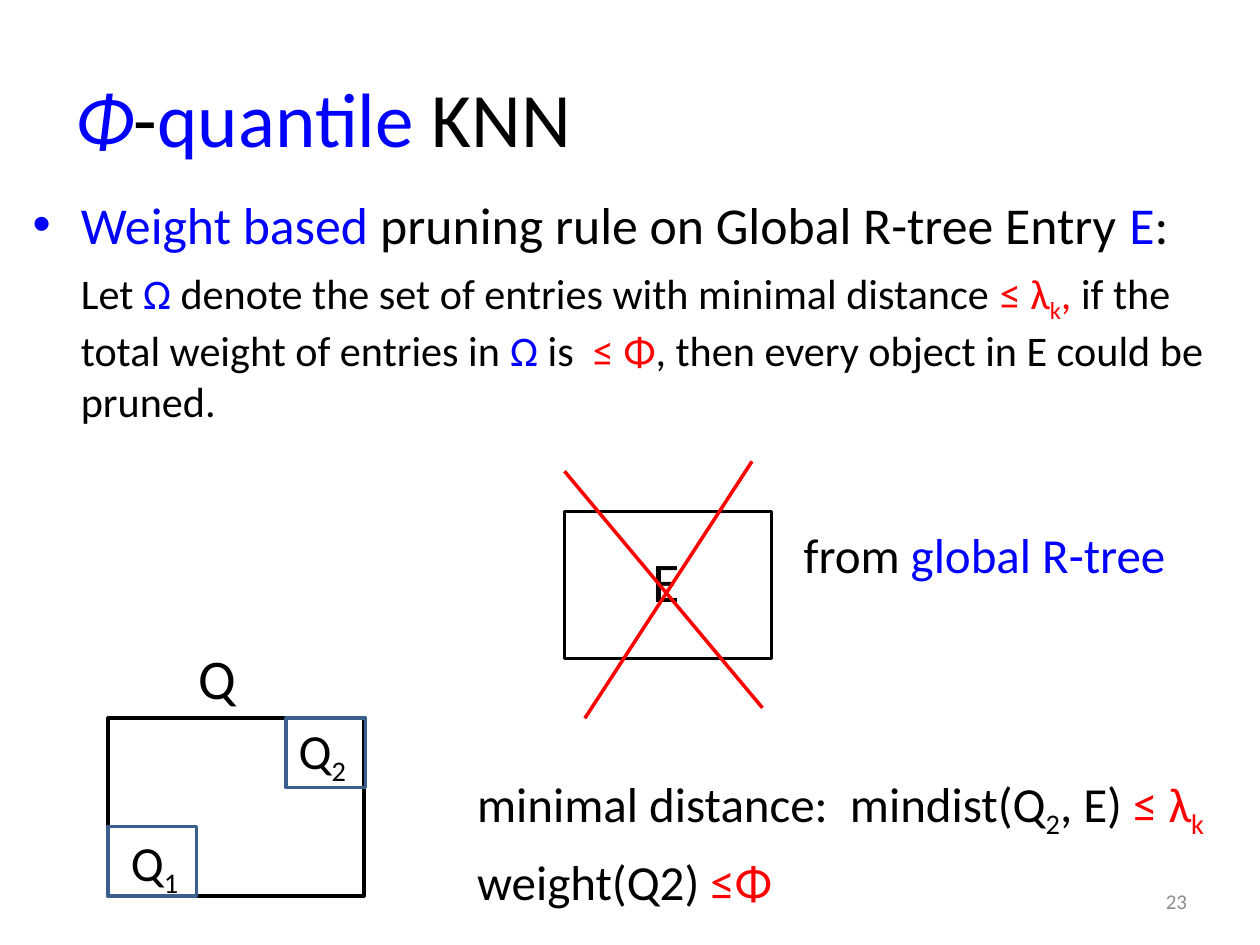
from dataclasses import dataclass

from lxml.etree import SubElement
from pptx import Presentation
from pptx.dml.color import RGBColor
from pptx.enum.shapes import MSO_CONNECTOR, MSO_SHAPE
from pptx.enum.text import MSO_ANCHOR, PP_ALIGN
from pptx.oxml.ns import qn
from pptx.slide import Slide
from pptx.util import Cm, Pt

BLACK = RGBColor(0x00, 0x00, 0x00)
BLUE = RGBColor(0x00, 0x00, 0xFF)
RED = RGBColor(0xFF, 0x00, 0x00)
STEEL = RGBColor(0x3A, 0x5F, 0x8C)
GRAY = RGBColor(0x8C, 0x8C, 0x8C)


@dataclass
class SlideBuilder:
    """Draws styled elements on the current slide."""

    slide: Slide
    font: str = "Calibri"
    line_width: float = 2

    def text_frame(self, left, top, width, height, wrap=True, anchor=MSO_ANCHOR.TOP):
        shape = self.slide.shapes.add_textbox(Cm(left), Cm(top), Cm(width), Cm(height))
        frame = shape.text_frame
        frame.word_wrap = wrap
        frame.vertical_anchor = anchor
        return frame

    def paragraph(self, frame, size, runs, indent=0, bullet=None, before=0, align=PP_ALIGN.LEFT):
        first = frame.paragraphs[0]
        paragraph = frame.add_paragraph() if first.runs else first
        paragraph.alignment = align
        paragraph.space_before = Pt(before)
        properties = paragraph._p.get_or_add_pPr()
        properties.set("marL", str(Cm(indent)))
        properties.set("indent", str(-Cm(indent) if bullet else 0))
        if bullet:
            SubElement(properties, qn("a:buFont"), typeface="Arial")
            SubElement(properties, qn("a:buChar"), char=bullet)
        for text, color, *style in runs:
            run = paragraph.add_run()
            run.text = text
            run.font.name = self.font
            run.font.size = Pt(size)
            run.font.color.rgb = color
            if "italic" in style:
                run.font.italic = True
            if "subscript" in style:
                run.font._element.set("baseline", "-25000")

    def label(self, left, top, width, height, size, runs):
        frame = self.text_frame(left, top, width, height, wrap=False)
        self.paragraph(frame, size, runs)

    def rectangle(self, left, top, width, height, color):
        shape = self.slide.shapes.add_shape(
            MSO_SHAPE.RECTANGLE, Cm(left), Cm(top), Cm(width), Cm(height))
        shape.shadow.inherit = False
        shape.fill.background()
        shape.line.color.rgb = color
        shape.line.width = Pt(self.line_width)

    def line(self, *ends):
        connector = self.slide.shapes.add_connector(MSO_CONNECTOR.STRAIGHT, *map(Cm, ends))
        connector.line.color.rgb = RED
        connector.line.width = Pt(self.line_width)
        SubElement(connector._element.spPr, qn("a:effectLst"))


def main():
    presentation = Presentation()
    presentation.slide_width, presentation.slide_height = Cm(25.4), Cm(19.05)
    builder = SlideBuilder(presentation.slides.add_slide(presentation.slide_layouts[6]))

    title = builder.text_frame(1.27, 0.76, 22.86, 3.18, anchor=MSO_ANCHOR.MIDDLE)
    builder.paragraph(title, 44, [
        ("Φ", BLUE, "italic"), ("-", BLACK), ("quantile ", BLUE), ("KNN", BLACK)])

    rule = builder.text_frame(0.41, 3.76, 24.99, 5.77)
    builder.paragraph(rule, 29.6, [
        ("Weight based ", BLUE), ("pruning rule on Global R-tree Entry ", BLACK),
        ("E", BLUE), (":", BLACK)], indent=0.97, bullet="•", before=6)
    builder.paragraph(rule, 24.1, [
        ("Let ", BLACK), ("Ω", BLUE),
        (" denote the set of entries with minimal distance ", BLACK),
        ("≤ λ", RED), ("k", RED, "subscript"), (", ", RED),
        ("if the total weight of entries in ", BLACK), ("Ω ", BLUE),
        ("is  ", BLACK), ("≤ Φ", RED),
        (", then every object in E could be pruned.", BLACK)], indent=0.97, before=7)

    number = builder.text_frame(18.26, 17.65, 5.92, 1.02, anchor=MSO_ANCHOR.MIDDLE)
    builder.paragraph(number, 12, [("23", GRAY)], align=PP_ALIGN.RIGHT)

    builder.rectangle(2.18, 14.48, 5.16, 3.58, BLACK)
    builder.label(3.76, 12.85, 1.27, 1.63, 32, [("Q", BLACK)])
    builder.rectangle(11.38, 10.31, 4.17, 2.97, BLACK)
    builder.label(12.9, 10.9, 1.07, 1.63, 32, [("E", BLACK)])
    builder.label(15.95, 10.44, 7.87, 1.45, 28, [("from ", BLACK), ("global R-tree", BLUE)])

    builder.rectangle(2.18, 16.66, 1.78, 1.4, STEEL)
    builder.rectangle(5.77, 14.48, 1.6, 1.4, STEEL)
    for index, left, top in (("1", 2.39, 16.66), ("2", 5.77, 14.4)):
        builder.label(left, top, 1.52, 1.45, 28, [("Q", BLACK), (index, BLACK, "subscript")])

    conditions = builder.text_frame(8.74, 15.47, 16.08, 3.38)
    for runs in (
        [("minimal distance:  mindist(Q", BLACK), ("2", BLACK, "subscript"),
         (", E) ", BLACK), ("≤ λ", RED), ("k", RED, "subscript")],
        [("weight(Q2) ", BLACK), ("≤Φ", RED)],
    ):
        builder.paragraph(conditions, 28, runs, indent=0.63, before=6.5)

    builder.line(11.38, 9.5, 15.37, 14.27)
    builder.line(15.16, 9.3, 11.79, 14.48)

    presentation.save("out.pptx")


if __name__ == "__main__":
    main()
